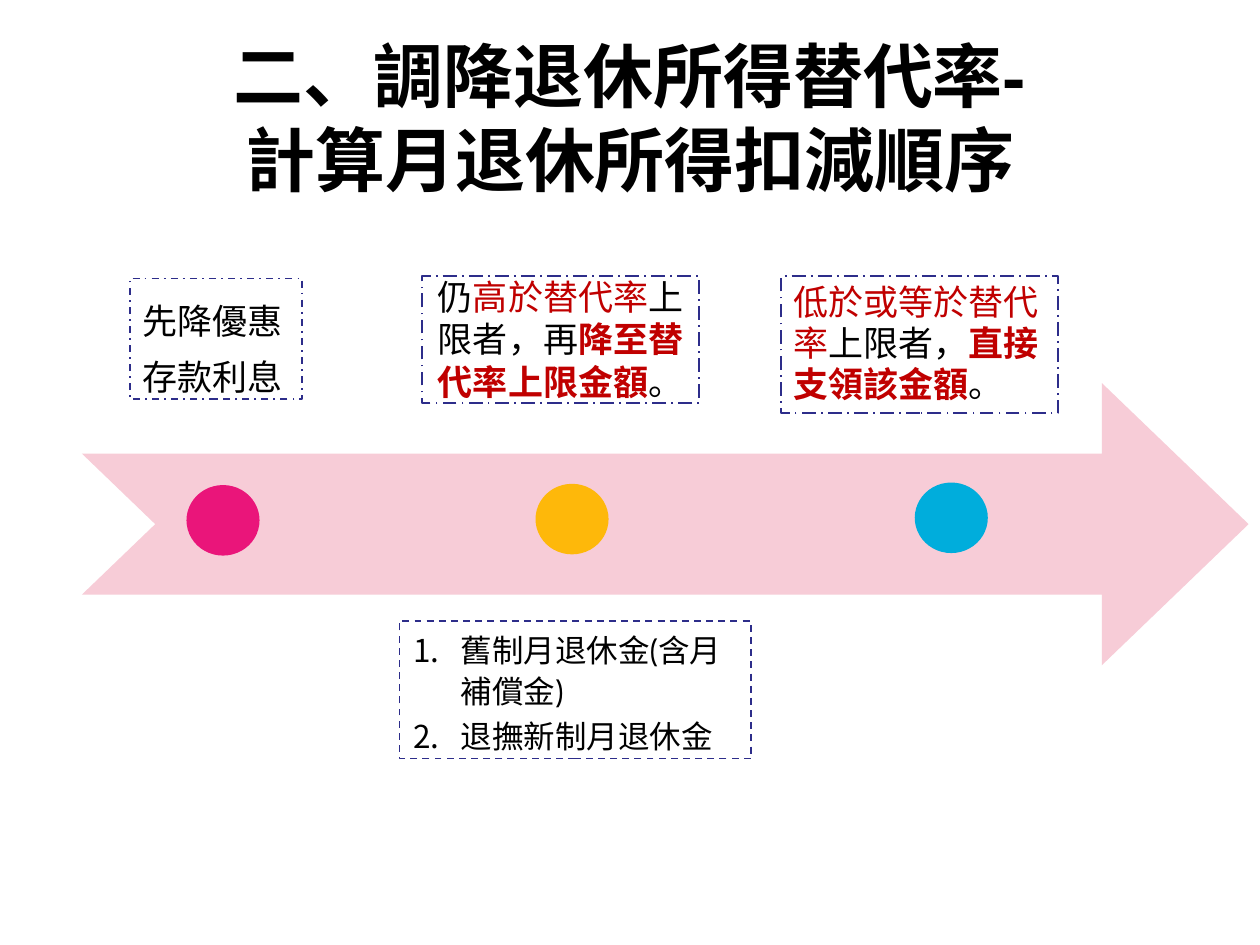
from dataclasses import dataclass
from typing import Any

from lxml import etree
from pptx import Presentation
from pptx import util as u
from pptx.dml.color import RGBColor
from pptx.enum import dml, shapes, text
from pptx.oxml.ns import qn

BLACK, RED, NAVY = "000000", "C00000", "2D2D8A"
SANS, TRAD, LATIN = "Noto Sans CJK SC", "Noto Sans CJK TC", "Cabin"


def rgb(code):
    """Turn a hex string into a colour."""
    return RGBColor.from_string(code)


@dataclass
class Deck:
    """Hold the style and the current slide."""
    slide: Any
    size: int = 20
    face: str = SANS

    def style(self, run, size, face, color=BLACK, bold=False):
        """Format one run, for Latin and East Asian text alike."""
        font = run.font
        font.size, font.name, font.bold = u.Pt(size), face, bold
        font.color.rgb = rgb(color)
        etree.SubElement(run.font._element, qn("a:ea"), typeface=face)

    def title(self, words, box):
        """Fill and place the title."""
        shape = self.slide.shapes.title
        shape.left, shape.top, shape.width, shape.height = map(u.Inches, box)
        frame = shape.text_frame
        frame.auto_size = text.MSO_AUTO_SIZE.NONE
        frame.vertical_anchor = text.MSO_ANCHOR.MIDDLE
        para = frame.paragraphs[0]
        para.text = words
        para.alignment = text.PP_ALIGN.CENTER
        for run in para.runs:
            self.style(run, 40, "Arial", bold=True)

    def shape(self, kind, box, fill):
        """Add a plain filled shape without a line."""
        item = self.slide.shapes.add_shape(kind, *map(u.Inches, box))
        item.shadow.inherit = False
        item.fill.solid()
        item.fill.fore_color.rgb = rgb(fill)
        item.line.fill.background()
        return item

    def note(self, box, dash, paras, space=None, align=text.PP_ALIGN.LEFT, top=0.05):
        """Add a dashed box of formatted paragraphs."""
        item = self.shape(shapes.MSO_SHAPE.RECTANGLE, box, "FFFFFF")
        item.line.color.rgb = rgb(NAVY)
        item.line.width = u.Pt(1)
        item.line.dash_style = dash
        frame = item.text_frame
        frame.word_wrap = True
        frame.vertical_anchor = text.MSO_ANCHOR.TOP
        frame.margin_top = u.Inches(top)
        for i, parts in enumerate(paras):
            para = frame.add_paragraph() if i else frame.paragraphs[0]
            para.alignment = align
            if space:
                para.line_spacing = space
            for words, *look in parts:
                run = para.add_run()
                run.text = words
                self.style(run, self.size, self.face, *look)
        return frame

    def steps(self, box, dash, paras):
        """Add a dashed box with a numbered list."""
        frame = self.note(box, dash, paras, u.Pt(23.4))
        for i, para in enumerate(frame.paragraphs):
            prop = para._p.get_or_add_pPr()
            prop.set("marL", str(u.Inches(0.39)))
            prop.set("indent", str(u.Inches(-0.38)))
            etree.SubElement(prop, qn("a:buAutoNum"), type="arabicPeriod")
            if i:
                para.space_before = u.Pt(2.6)
            for run in para.runs:
                if run.text in "()":
                    run.font.name = LATIN


def main():
    """Build the slide."""
    prs = Presentation()
    prs.slide_width, prs.slide_height = u.Inches(10), u.Inches(7.5)
    deck = Deck(prs.slides.add_slide(prs.slide_layouts[5]))
    deck.title("二、調降退休所得替代率-\v計算月退休所得扣減順序", (0.5, 0.3, 9, 1.25))

    arrow = deck.shape(shapes.MSO_SHAPE.NOTCHED_RIGHT_ARROW, (0.65, 3.04, 9.26, 2.24), "F7CCD7")
    arrow.adjustments[1] = 0.52
    dots = (1.48, 3.85, "EA157A"), (4.25, 3.84, "FEB80A"), (7.26, 3.83, "00ADDC")
    for left, top, fill in dots:
        deck.shape(shapes.MSO_SHAPE.OVAL, (left, top, 0.58, 0.56), fill)

    line = dml.MSO_LINE
    deck.note((1.03, 2.21, 1.37, 0.96), line.DASH_DOT, [[("先降優惠存款利息",)]], 1.35)
    deck.note((3.35, 2.19, 2.2, 1.01), line.LONG_DASH_DOT, [[
        ("仍",), ("高於替代率", RED), ("上限者，再",),
        ("降至替代率上限金額", RED, True), ("。",)]],
        align=text.PP_ALIGN.CENTER, top=0)
    deck.note((6.2, 2.19, 2.2, 1.09), line.LONG_DASH_DOT, [[
        ("低於或等於替代率", RED), ("上限者，",),
        ("直接支領該金額", RED, True), ("。",)]], 0.98)

    deck.size, deck.face = 18, TRAD
    deck.steps((3.17, 4.93, 2.79, 1.09), line.DASH, [
        [("舊制月退休金",), ("(",), ("含月補償金",), (")",)],
        [("退撫新制月退休金",)]])
    prs.save("out.pptx")


if __name__ == "__main__":
    main()
